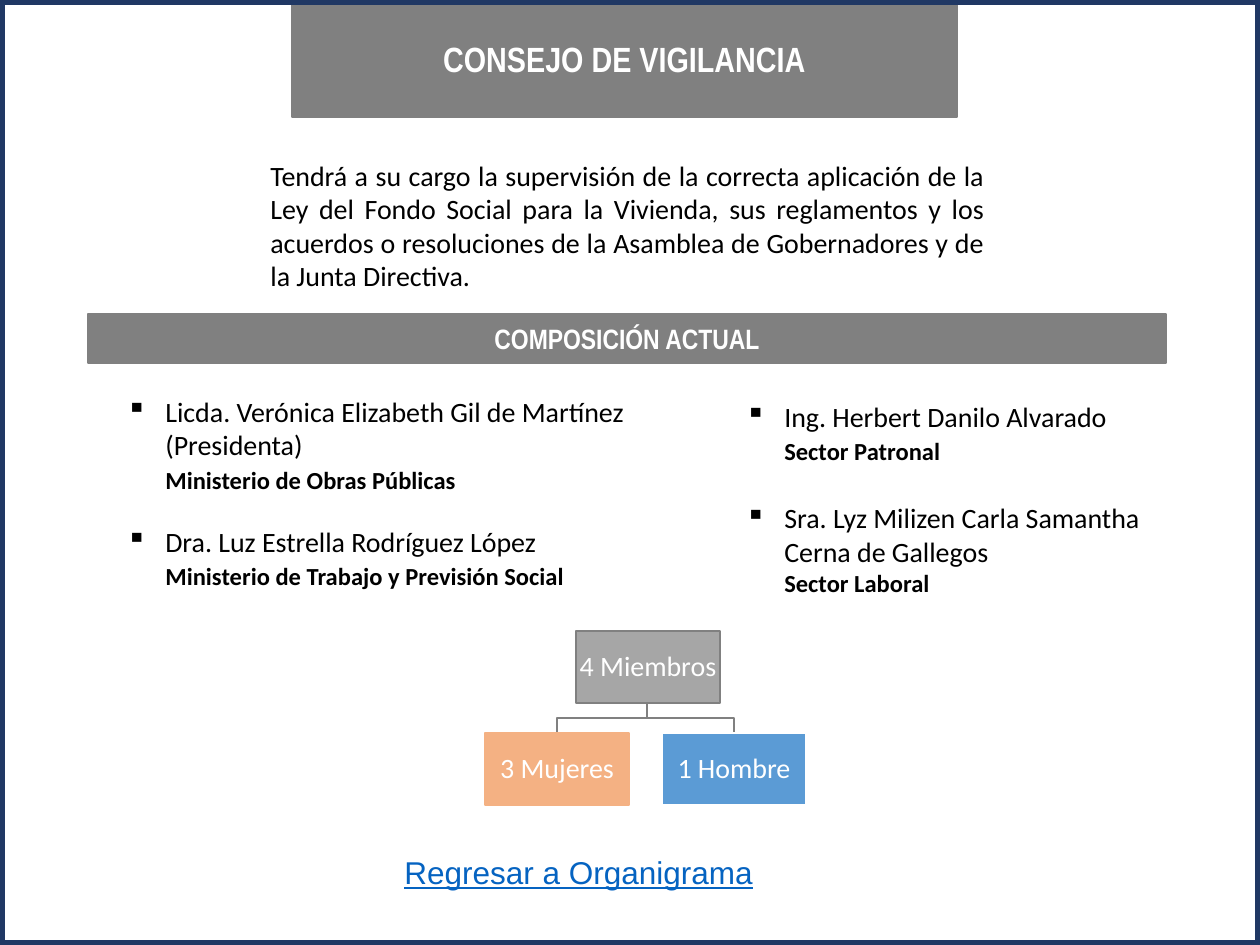
import pptx
import pptx.util
import pptx.dml.color
import pptx.enum.shapes
import pptx.enum.text
import pptx.oxml.ns
from lxml import etree

RGBColor = pptx.dml.color.RGBColor
NAVY = RGBColor(0x20, 0x38, 0x64)
GRAY = RGBColor(0x80, 0x80, 0x80)
LIGHT_GRAY = RGBColor(0xA6, 0xA6, 0xA6)
ORANGE = RGBColor(0xF4, 0xB1, 0x83)
BLUE = RGBColor(0x5B, 0x9B, 0xD5)
LINK_BLUE = RGBColor(0x05, 0x63, 0xC1)
WHITE = RGBColor(0xFF, 0xFF, 0xFF)
BLACK = RGBColor(0, 0, 0)

PX = 914400 / 126
RECTANGLE = pptx.enum.shapes.MSO_SHAPE.RECTANGLE
ALIGN = pptx.enum.text.PP_ALIGN
MIDDLE = pptx.enum.text.MSO_ANCHOR.MIDDLE


def emu(*lengths):
    return [round(length * PX) for length in lengths]


def write(para, text, size, color, name="Calibri", **formats):
    span = para.add_run()
    span.text = text
    span.font.color.rgb = color
    formats.update(size=pptx.util.Pt(size), name=name)
    for key, value in formats.items():
        setattr(span.font, key, value)


deck = pptx.Presentation()
deck.slide_width, deck.slide_height = emu(1260, 945)
page = deck.slides.add_slide(deck.slide_layouts[5])

# Page border
border = page.shapes.add_shape(RECTANGLE, *emu(0, 0, 1260, 945))
border.shadow.inherit = False
border.fill.background()
border.line.color.rgb = NAVY
border.line.width = pptx.util.Pt(6)

# Title and section banners
title = page.shapes.title
title.left, title.top, title.width, title.height = emu(292, 1, 665, 116)
section = page.shapes.add_shape(RECTANGLE, *emu(88, 314, 1078, 49))
section.shadow.inherit = False
for banner, text, size in [(title, "CONSEJO DE VIGILANCIA", 20),
                           (section, "COMPOSICIÓN ACTUAL", 16)]:
    banner.fill.solid()
    banner.fill.fore_color.rgb = GRAY
    banner.line.color.rgb = GRAY
    banner.line.width = pptx.util.Pt(1)
    frame = banner.text_frame
    frame.auto_size = pptx.enum.text.MSO_AUTO_SIZE.NONE
    frame.vertical_anchor = MIDDLE
    para = frame.paragraphs[0]
    para.alignment = ALIGN.CENTER
    write(para, text, size, WHITE, "Arial Narrow", bold=True)

# Description
description = page.shapes.add_textbox(*emu(258, 152, 739, 150))
description.text_frame.word_wrap = True
para = description.text_frame.paragraphs[0]
para.alignment = ALIGN.JUSTIFY
write(para, "Tendrá a su cargo la supervisión de la correcta aplicación de la Ley del "
            "Fondo Social para la Vivienda, sus reglamentos y los acuerdos o resoluciones "
            "de la Asamblea de Gobernadores y de la Junta Directiva.", 16, BLACK)

# Members: name, sector, space before each in points
columns = [
    ((114, 388, 527, 212), [
        ("Licda. Verónica Elizabeth Gil de Martínez (Presidenta)", 0,
         "Ministerio de Obras Públicas", 2),
        ("Dra. Luz Estrella Rodríguez López", 17,
         "Ministerio de Trabajo y Previsión Social", 2)]),
    ((733, 393, 467, 212), [
        ("Ing. Herbert Danilo Alvarado", 0, "Sector Patronal", 2),
        ("Sra. Lyz Milizen Carla Samantha Cerna de Gallegos", 20,
         "Sector Laboral", 0)]),
]
indent = emu(39)[0]
for place, members in columns:
    box = page.shapes.add_textbox(*emu(*place))
    frame = box.text_frame
    frame.word_wrap = True
    for number, (member, member_gap, sector, sector_gap) in enumerate(members):
        para = frame.add_paragraph() if number else frame.paragraphs[0]
        para.space_before = pptx.util.Pt(member_gap)
        props = para._p.get_or_add_pPr()
        props.set("marL", str(indent))
        props.set("indent", str(-indent))
        bullet = etree.SubElement(props, pptx.oxml.ns.qn("a:buChar"))
        bullet.set("char", "▪")
        write(para, member, 16, BLACK)

        para = frame.add_paragraph()
        para.space_before = pptx.util.Pt(sector_gap)
        para._p.get_or_add_pPr().set("marL", str(indent))
        write(para, sector, 14, BLACK, bold=True)

# Tree branches: from the parent's bottom to each child's top
for child_x in (734, 557):
    builder = page.shapes.build_freeform(*emu(647, 703))
    builder.add_line_segments(
        [emu(*point) for point in [(647, 718), (child_x, 718), (child_x, 733)]],
        close=False)
    branch = builder.convert_to_shape()
    branch.shadow.inherit = False
    branch.fill.background()
    branch.line.color.rgb = GRAY
    branch.line.width = pptx.util.Pt(1)

# Tree boxes
for left, top, text, fill, line in [(576, 631, "4 Miembros", LIGHT_GRAY, GRAY),
                                    (485, 733, "3 Mujeres", ORANGE, ORANGE),
                                    (662, 733, "1 Hombre", BLUE, WHITE)]:
    box = page.shapes.add_shape(RECTANGLE, *emu(left, top, 144, 72))
    box.shadow.inherit = False
    box.fill.solid()
    box.fill.fore_color.rgb = fill
    box.line.color.rgb = line
    box.line.width = pptx.util.Pt(1)
    frame = box.text_frame
    frame.vertical_anchor = MIDDLE
    for side in ("left", "top", "right", "bottom"):
        setattr(frame, "margin_" + side, emu(1)[0])
    para = frame.paragraphs[0]
    para.alignment = ALIGN.CENTER
    para.line_spacing = 0.9
    write(para, text, 16, WHITE)

# Return label
label = page.shapes.add_textbox(*emu(392, 847, 412, 50))
label.text_frame.word_wrap = True
write(label.text_frame.paragraphs[0], "Regresar a Organigrama", 18, LINK_BLUE, "Arial",
      underline=True)

deck.save("out.pptx")
